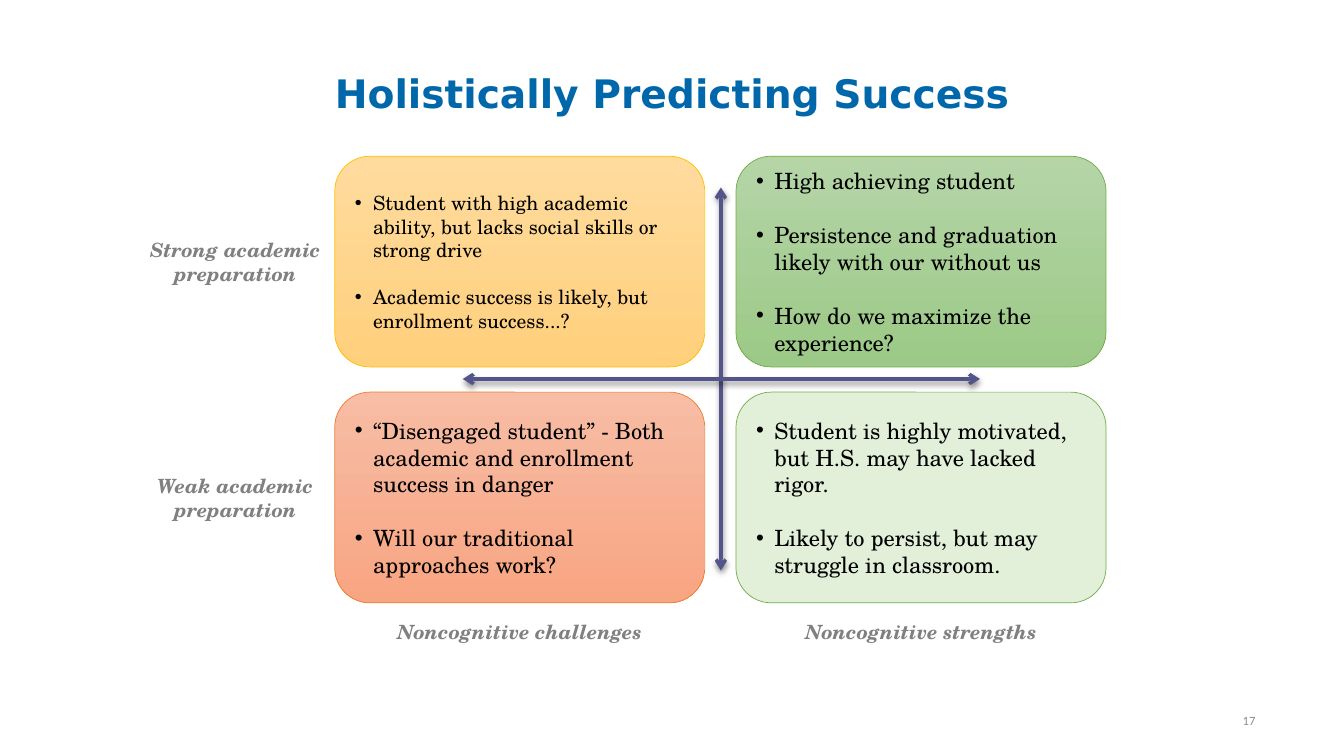
import pptx
import pptx.dml.color
import pptx.enum.shapes
import pptx.enum.text
import pptx.oxml
import pptx.util
from pptx.util import Inches, Pt

SERIF = "TeX Gyre Schola"
TITLE = "Holistically Predicting Success"
PAGE = "17"

# column, row, fill colours (two make a gradient), line, text size, bullets
QUADRANTS = [
    (0, 0, ["FFDB9E", "FFD07C"], "FFC000", 14,
     ["Student with high academic ability, but lacks social skills or strong drive",
      "Academic success is likely, but enrollment success...?"]),
    (1, 0, ["B5D5A7", "9CC987"], "70AD47", 16,
     ["High achieving student",
      "Persistence and graduation likely with our without us",
      "How do we maximize the experience?"]),
    (0, 1, ["F7BDA5", "F8A582"], "ED7D31", 16,
     ["“Disengaged student” - Both academic and enrollment success in danger",
      "Will our traditional approaches work?"]),
    (1, 1, ["E2F0D9"], "70AD47", 16,
     ["Student is highly motivated, but H.S. may have lacked rigor.",
      "Likely to persist, but may struggle in classroom."]),
]
ROW_LABELS = [["Strong academic", "preparation"], ["Weak academic", "preparation"]]
COLUMN_LABELS = ["Noncognitive challenges", "Noncognitive strengths"]
AXES = [(7.15, 1.86, 7.15, 5.66), (4.59, 3.76, 9.72, 3.76)]

LEFTS, TOPS = [3.32, 7.3], [1.55, 3.89]
BOX_W, BOX_H = 3.67, 2.09
LABEL_W = 2.8
ROW_LABEL_X, COLUMN_LABEL_Y = 2.335, 6.27

A = 'xmlns:a="http://schemas.openxmlformats.org/drawingml/2006/main"'
SHADOW = (f'<a:effectLst {A}><a:outerShdw blurRad="50800" dist="25400" dir="5400000" '
          'rotWithShape="0"><a:srgbClr val="000000"><a:alpha val="45000"/></a:srgbClr>'
          '</a:outerShdw></a:effectLst>')


def rgb(value):
    return pptx.dml.color.RGBColor.from_string(value)


def write(shape, lines, size, font=SERIF, color="000000", bold=False, italic=False,
          align="CENTER", anchor="MIDDLE", bullet=False, gap=0, wrap=True):
    tf = shape.text_frame
    tf.word_wrap = wrap
    tf.vertical_anchor = pptx.enum.text.MSO_ANCHOR[anchor]
    for i, line in enumerate(lines):
        p = tf.paragraphs[0] if i == 0 else tf.add_paragraph()
        if bullet:
            pPr = p._p.get_or_add_pPr()
            pPr.set("marL", str(Inches(0.18)))
            pPr.set("indent", str(Inches(-0.18)))
            pPr.append(pptx.oxml.parse_xml(f'<a:buFont {A} typeface="Arial"/>'))
            pPr.append(pptx.oxml.parse_xml(f'<a:buChar {A} char="•"/>'))
        p.alignment = pptx.enum.text.PP_ALIGN[align]
        if i:
            p.space_before = Pt(gap)
        r = p.add_run()
        r.text = line
        r.font.size, r.font.name = Pt(size), font
        r.font.bold, r.font.italic = bold, italic
        r.font.color.rgb = rgb(color)


def textbox(s, x, y, w, h, lines, size, **style):
    write(s.shapes.add_textbox(Inches(x), Inches(y), Inches(w), Inches(h)),
          lines, size, **style)


def label(s, center_x, center_y, lines):
    h = 0.1 + 0.235 * len(lines)
    textbox(s, center_x - LABEL_W / 2, center_y - h / 2, LABEL_W, h, lines, 14,
            color="808080", bold=True, italic=True, wrap=False)


def axis(s, x1, y1, x2, y2):
    """Draw a shadowed line with an arrowhead at each end."""
    line = s.shapes.add_connector(pptx.enum.shapes.MSO_CONNECTOR.STRAIGHT,
                                  Inches(x1), Inches(y1), Inches(x2), Inches(y2))
    line.line.color.rgb = rgb("53548A")
    line.line.width = Pt(2.5)
    for end in ("headEnd", "tailEnd"):
        line.line._get_or_add_ln().append(
            pptx.oxml.parse_xml(f'<a:{end} {A} type="arrow"/>'))
    line._element.spPr.append(pptx.oxml.parse_xml(SHADOW))


def quadrant(s, column, row, fills, outline, size, bullets):
    sp = s.shapes.add_shape(pptx.enum.shapes.MSO_SHAPE.ROUNDED_RECTANGLE,
                            Inches(LEFTS[column]), Inches(TOPS[row]),
                            Inches(BOX_W), Inches(BOX_H))
    sp.shadow.inherit = False
    if len(fills) == 1:
        sp.fill.solid()
        sp.fill.fore_color.rgb = rgb(fills[0])
    else:
        sp.fill.gradient()
        sp.fill.gradient_angle = 270
        for stop, color in zip(sp.fill.gradient_stops, fills):
            stop.color.rgb = rgb(color)
    sp.line.color.rgb = rgb(outline)
    sp.line.width = Pt(0.5)
    write(sp, bullets, size, align="LEFT", bullet=True, gap=size * 1.2)


def main():
    prs = pptx.Presentation()
    prs.slide_width, prs.slide_height = Inches(13.33), Inches(7.5)
    s = prs.slides.add_slide(prs.slide_layouts[6])

    textbox(s, 0, 0.3, 13.33, 1.25, [TITLE], 28, font="DejaVu Sans",
            color="0067AB", bold=True)
    textbox(s, 9.44, 6.95, 3.11, 0.4, [PAGE], 9, font="Calibri",
            color="8C8C8C", align="RIGHT")
    for ends in AXES:
        axis(s, *ends)
    for top, lines in zip(TOPS, ROW_LABELS):
        label(s, ROW_LABEL_X, top + BOX_H / 2, lines)
    for left, text in zip(LEFTS, COLUMN_LABELS):
        label(s, left + BOX_W / 2, COLUMN_LABEL_Y, [text])
    for item in QUADRANTS:
        quadrant(s, *item)
    prs.save("out.pptx")


if __name__ == "__main__":
    main()
